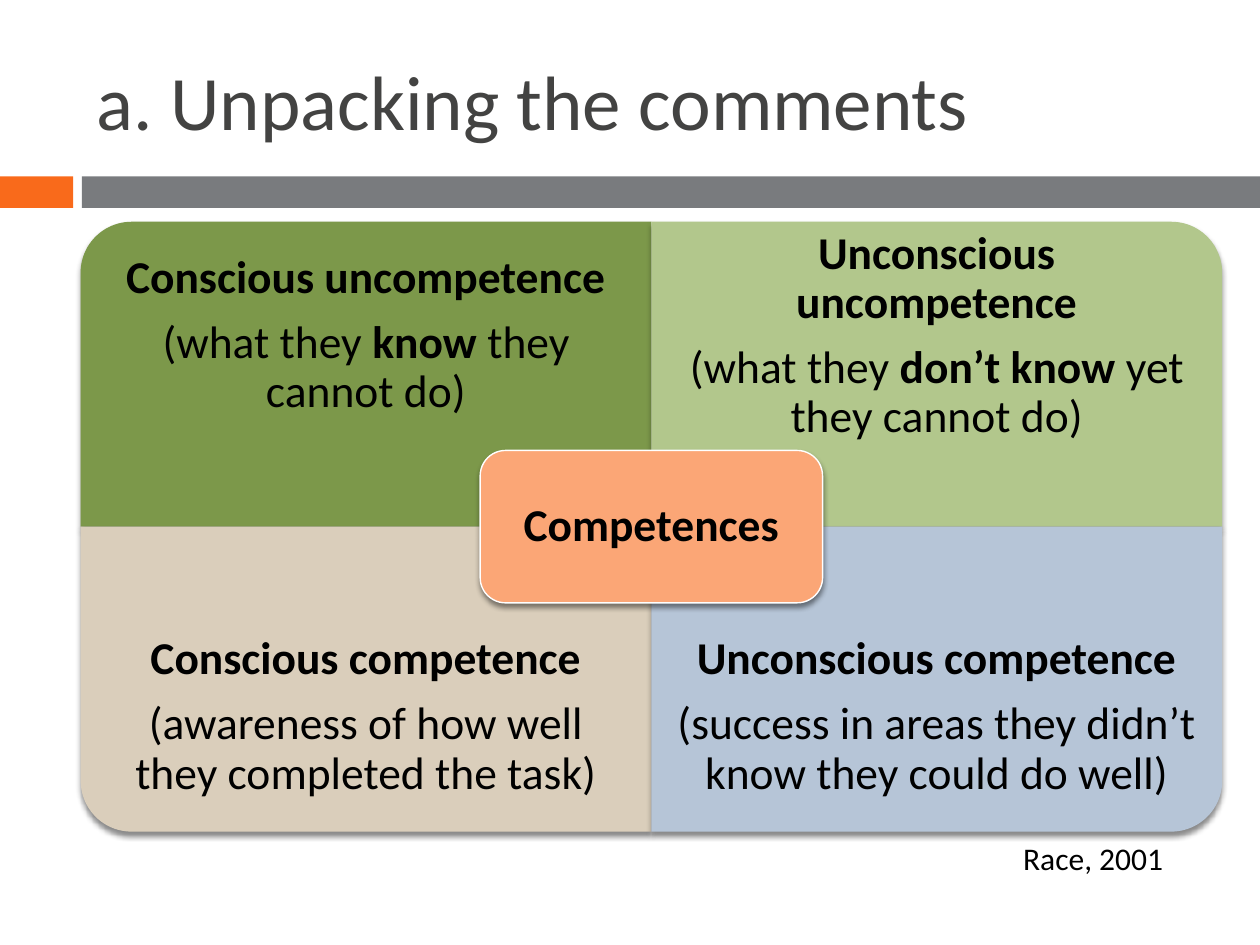
import pptx
import pptx.dml.color
import pptx.enum.shapes
import pptx.enum.text
import pptx.oxml
import pptx.oxml.ns
import pptx.util

Inches = pptx.util.Inches
Pt = pptx.util.Pt
RGBColor = pptx.dml.color.RGBColor
MSO_SHAPE = pptx.enum.shapes.MSO_SHAPE
PP_ALIGN = pptx.enum.text.PP_ALIGN
MSO_ANCHOR = pptx.enum.text.MSO_ANCHOR

ORANGE = RGBColor(0xF9, 0x6A, 0x1B)
GREY = RGBColor(0x79, 0x7B, 0x7E)
TITLE_GREY = RGBColor(0x43, 0x43, 0x42)
DARK_GREEN = RGBColor(0x7C, 0x98, 0x4A)
LIGHT_GREEN = RGBColor(0xB2, 0xC7, 0x8C)
SAND = RGBColor(0xDA, 0xCE, 0xBB)
BLUE = RGBColor(0xB6, 0xC5, 0xD7)
PEACH = RGBColor(0xFB, 0xA6, 0x76)
BLACK = RGBColor(0, 0, 0)
WHITE = RGBColor(0xFF, 0xFF, 0xFF)

# Content: a paragraph is a list of (text, bold) spans
TITLE = "a. Unpacking the comments"
CENTRE = "Competences"
CREDIT = "Race, 2001"
BANDS = [(0, 0.58, ORANGE), (0.65, 9.35, GREY)]  # left, width, colour
QUADRANTS = [  # column, row, rotation, colour, paragraphs
    (0, 0, 270, DARK_GREEN, [
        [("Conscious uncompetence", True)],
        [("(what they ", False), ("know", True), (" they cannot do)", False)]]),
    (1, 0, 0, LIGHT_GREEN, [
        [("Unconscious uncompetence", True)],
        [("(what they ", False), ("don’t know", True), (" yet they cannot do)", False)]]),
    (0, 1, 180, SAND, [
        [("Conscious competence", True)],
        [("(awareness of how well they completed the task)", False)]]),
    (1, 1, 90, BLUE, [
        [("Unconscious competence", True)],
        [("(success in areas they didn’t know they could do well)", False)]]),
]

# Matrix geometry in inches
LEFT, TOP = 0.64, 1.76
CELL_WIDTH, CELL_HEIGHT = 4.53, 2.42
TEXT_HEIGHT = CELL_HEIGHT * 0.75
CENTRE_WIDTH, CENTRE_HEIGHT = CELL_WIDTH * 0.6, CELL_HEIGHT * 0.5

SHADOW_XML = (
    f'<a:outerShdw {pptx.oxml.ns.nsdecls("a")} blurRad="{Pt(3)}" dist="{Pt(2.4)}"'
    ' dir="5400000" rotWithShape="0"><a:srgbClr val="000000">'
    '<a:alpha val="45000"/></a:srgbClr></a:outerShdw>')


def add_filled(page, kind, left, top, width, height, colour, shadow=False):
    shape = page.shapes.add_shape(
        kind, Inches(left), Inches(top), Inches(width), Inches(height))
    shape.fill.solid()
    shape.fill.fore_color.rgb = colour
    shape.line.fill.background()
    shape.shadow.inherit = False
    if shadow:
        effects = shape._element.spPr.find(pptx.oxml.ns.qn("a:effectLst"))
        effects.append(pptx.oxml.parse_xml(SHADOW_XML))
    return shape


def add_text(page, left, top, width, height, paragraphs, size, colour=BLACK,
             align=PP_ALIGN.LEFT, anchor=MSO_ANCHOR.MIDDLE, inset=None, packed=False):
    box = page.shapes.add_textbox(
        Inches(left), Inches(top), Inches(width), Inches(height))
    frame = box.text_frame
    frame.word_wrap = True
    frame.vertical_anchor = anchor
    if inset is not None:
        frame.margin_left = frame.margin_right = Inches(inset)
        frame.margin_top = frame.margin_bottom = Inches(inset)
    for number, spans in enumerate(paragraphs):
        para = frame.add_paragraph() if number else frame.paragraphs[0]
        para.alignment = align
        if packed:
            para.line_spacing = 0.9
            para.space_after = Pt(size * 0.35)
        for text, bold in spans:
            span = para.add_run()
            span.text = text
            span.font.name = "Calibri"
            span.font.size = Pt(size)
            span.font.bold = bold
            span.font.color.rgb = colour
    return box


def main():
    deck = pptx.Presentation()
    deck.slide_width, deck.slide_height = Inches(10), Inches(7.5)
    page = deck.slides.add_slide(deck.slide_layouts[6])

    # Title and the bands under it
    for left, width, colour in BANDS:
        add_filled(page, MSO_SHAPE.RECTANGLE, left, 1.4, width, 0.25, colour)
    add_text(page, 0.67, 0.25, 8.92, 1.08, [[(TITLE, False)]], 44, TITLE_GREY)

    # Quadrants: each is turned so that its round corner points outwards
    for column, row, rotation, colour, paragraphs in QUADRANTS:
        left = LEFT + column * CELL_WIDTH
        top = TOP + row * CELL_HEIGHT
        width, height = CELL_WIDTH, CELL_HEIGHT
        if rotation % 180:
            width, height = height, width
        shape = add_filled(
            page, MSO_SHAPE.ROUND_1_RECTANGLE, left + (CELL_WIDTH - width) / 2,
            top + (CELL_HEIGHT - height) / 2, width, height, colour, shadow=True)
        shape.rotation = rotation
        text_top = top + row * (CELL_HEIGHT - TEXT_HEIGHT)
        add_text(page, left, text_top, CELL_WIDTH, TEXT_HEIGHT, paragraphs, 26,
                 align=PP_ALIGN.CENTER, inset=0.2, packed=True)

    # Centre label
    left = LEFT + CELL_WIDTH - CENTRE_WIDTH / 2
    top = TOP + CELL_HEIGHT - CENTRE_HEIGHT / 2
    label = add_filled(page, MSO_SHAPE.ROUNDED_RECTANGLE, left, top,
                       CENTRE_WIDTH, CENTRE_HEIGHT, PEACH, shadow=True)
    label.line.color.rgb = WHITE
    label.line.width = Pt(0.79)
    add_text(page, left + 0.06, top + 0.06, CENTRE_WIDTH - 0.12, CENTRE_HEIGHT - 0.12,
             [[(CENTRE, True)]], 26, align=PP_ALIGN.CENTER, inset=0.11, packed=True)

    # Credit
    add_text(page, 6.23, 6.61, 3.1, 0.4, [[(CREDIT, False)]], 18,
             align=PP_ALIGN.RIGHT, anchor=MSO_ANCHOR.TOP)

    deck.save("out.pptx")


if __name__ == "__main__":
    main()
